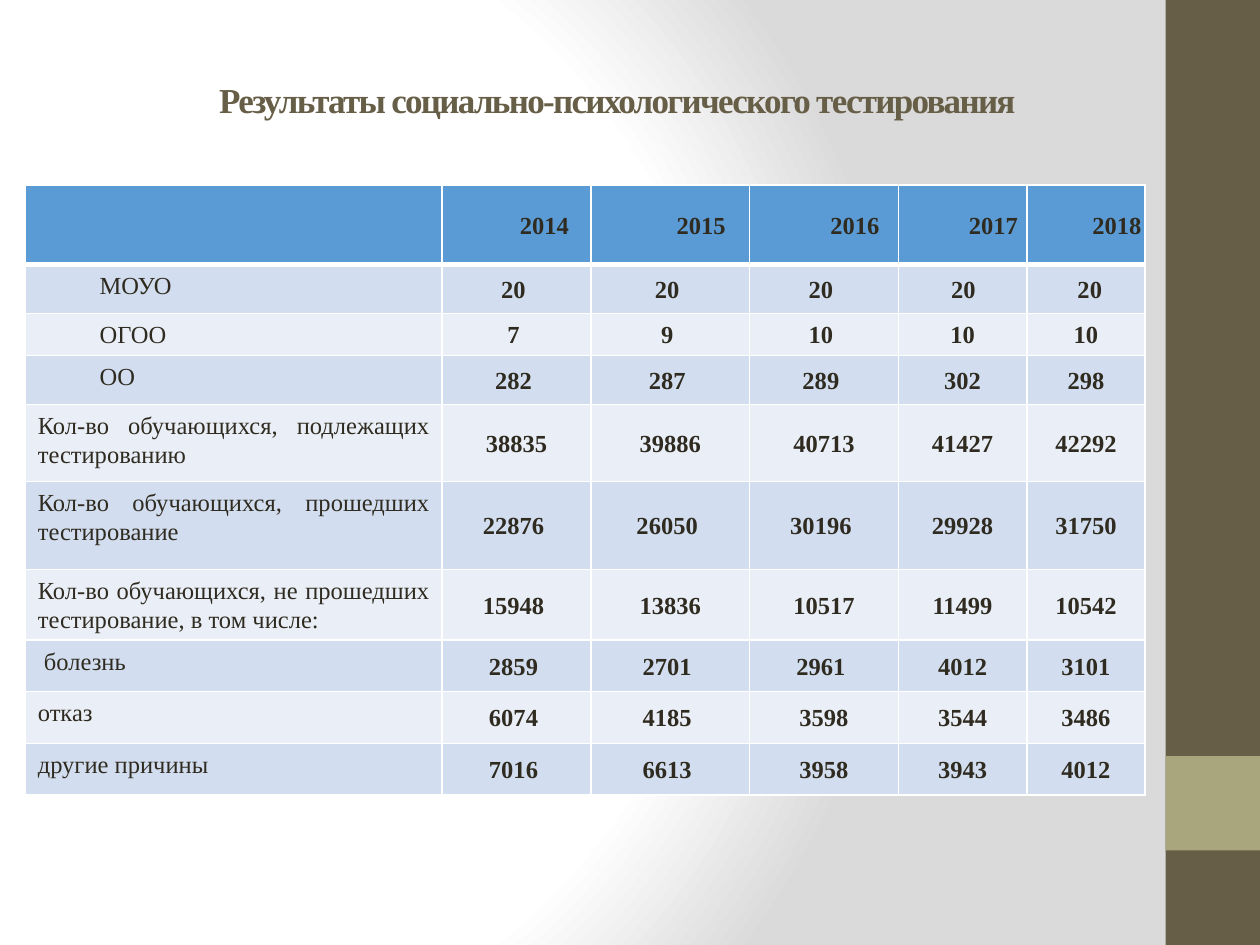
from dataclasses import dataclass

from pptx import Presentation
from pptx.dml.color import RGBColor
from pptx.enum.shapes import MSO_SHAPE as Shape
from pptx.enum.text import MSO_ANCHOR as Anchor, PP_ALIGN as Align
from pptx.oxml import parse_xml
from pptx.oxml.ns import nsdecls, qn
from pptx.slide import Slide
from pptx.util import Inches, Pt

COLORS = {
    "white": "FFFFFF", "shade": "DADADA", "brown": "675E47", "olive": "A9A57C",
    "header": "5B9BD5", "odd": "D2DEEF", "even": "EAEFF7", "ink": "2F2B20",
}
GRID_COLUMNS, GRID_ROWS = 100, 75
TITLE = " Результаты социально-психологического тестирования"
COLUMN_SPANS = [33.1, 11.8, 12.6, 11.8, 10.2, 9.4]
ROW_SPANS = [6.3, 3.9, 3.1, 3.9, 6.1, 7, 4.6, 4.1, 4.1, 4.1]
# Some figures end in a space, which shifts them off the centre of the cell.
RESULTS = [
    ["", "2014 ", "2015", "2016", "2017", "2018"],
    ["МОУО", "20 ", "20 ", "20 ", "20 ", "20"],
    ["ОГОО", "7 ", "9 ", "10 ", "10", "10"],
    ["ОО", "282 ", "287 ", "289 ", "302", "298"],
    ["Кол-во обучающихся, подлежащих тестированию",
     "38835", "39886", "40713", "41427", "42292"],
    ["Кол-во обучающихся, прошедших тестирование",
     "22876 ", "26050 ", "30196 ", "29928", "31750"],
    ["Кол-во обучающихся, не прошедших тестирование, в том числе:",
     "15948 ", "13836", "10517", "11499", "10542"],
    [" болезнь", "2859 ", "2701 ", "2961 ", "4012", "3101"],
    ["отказ", "6074 ", "4185 ", "3598", "3544", "3486"],
    ["другие причины", "7016 ", "6613 ", "3958", "3943", "4012"],
]
INSTITUTION_ROWS = range(1, 4)
NARROW_COLUMNS = (4, 5)


@dataclass
class Deck:
    slide: Slide
    width: int
    height: int
    font: str = "Times New Roman"

    def across(self, columns):
        return round(self.width * columns / GRID_COLUMNS)

    def down(self, rows):
        return round(self.height * rows / GRID_ROWS)

    def box(self, left, top, width, height):
        return self.across(left), self.down(top), self.across(width), self.down(height)

    def background(self, stops):
        """Radial gradient centred left of the middle; stops are (percent, colour)."""
        self.slide.background.fill.gradient()
        plain = self.slide.element.find(".//" + qn("a:gradFill"))
        stop_list = "".join(
            f'<a:gs pos="{percent * 1000}"><a:srgbClr val="{COLORS[color]}"/></a:gs>'
            for percent, color in stops)
        radial = parse_xml(
            f'<a:gradFill {nsdecls("a")} rotWithShape="1"><a:gsLst>{stop_list}</a:gsLst>'
            '<a:path path="circle"><a:fillToRect l="20000" t="50000" r="100000" b="50000"/>'
            '</a:path></a:gradFill>')
        plain.getparent().replace(plain, radial)

    def band(self, color, *area):
        band = self.slide.shapes.add_shape(Shape.RECTANGLE, *self.box(*area))
        band.shadow.inherit = False
        band.fill.solid()
        band.fill.fore_color.rgb = RGBColor.from_string(COLORS[color])
        band.line.fill.background()

    def text(self, paragraph, words, size, color, bold):
        run = paragraph.add_run()
        run.text = words
        run.font.name = self.font
        run.font.size = Pt(size)
        run.font.bold = bold
        run.font.color.rgb = RGBColor.from_string(COLORS[color])
        return run

    def title(self, words, *area):
        title = self.slide.shapes.title
        title.left, title.top, title.width, title.height = self.box(*area)
        frame = title.text_frame
        frame.word_wrap = True
        frame.vertical_anchor = Anchor.MIDDLE
        heading = frame.paragraphs[0]
        heading.alignment = Align.CENTER
        run = self.text(heading, words, 20, "brown", True)
        run._r.get_or_add_rPr().set("spc", "-100")

    def table(self, rows, left, top):
        area = self.box(left, top, sum(COLUMN_SPANS), sum(ROW_SPANS))
        table = self.slide.shapes.add_table(len(rows), len(rows[0]), *area).table
        table.horz_banding = False
        for column, span in zip(table.columns, COLUMN_SPANS):
            column.width = self.across(span)
        for row, span in zip(table.rows, ROW_SPANS):
            row.height = self.down(span)
        for r, entries in enumerate(rows):
            for c, entry in enumerate(entries):
                self.cell(table.cell(r, c), r, c, entry)

    def cell(self, cell, row, column, entry):
        color = "header" if row == 0 else "odd" if row % 2 else "even"
        cell.fill.solid()
        cell.fill.fore_color.rgb = RGBColor.from_string(COLORS[color])
        self.borders(cell, top=3 if row == 1 else 1, bottom=3 if row == 0 else 1)

        narrow, label = column in NARROW_COLUMNS, column == 0
        cell.margin_left = cell.margin_right = Inches(0 if narrow else 0.1)
        cell.margin_top = cell.margin_bottom = Inches(0 if narrow else 0.05)
        cell.vertical_anchor = Anchor.TOP if label else Anchor.MIDDLE

        paragraph = cell.text_frame.paragraphs[0]
        paragraph.alignment = Align.JUSTIFY if label else Align.CENTER
        paragraph.line_spacing = 1.07
        indented = row == 0 or (label and row in INSTITUTION_ROWS)
        margin = 0.06 if narrow and row == 1 else 0
        properties = paragraph._p.get_or_add_pPr()
        properties.set("marL", str(Inches(margin)))
        properties.set("indent", str(Inches(0.49 if indented else 0)))
        if entry:
            self.text(paragraph, entry, 14, "ink", not label)

    def borders(self, cell, top, bottom):
        """White cell borders; the lines have to precede the fill."""
        sides = [("L", 1), ("R", 1), ("T", top), ("B", bottom)]
        for position, (side, weight) in enumerate(sides):
            cell._tc.get_or_add_tcPr().insert(position, parse_xml(
                f'<a:ln{side} {nsdecls("a")} w="{Pt(weight)}"><a:solidFill>'
                f'<a:srgbClr val="{COLORS["white"]}"/></a:solidFill></a:ln{side}>'))


def main():
    prs = Presentation()
    prs.slide_width, prs.slide_height = Inches(10), Inches(7.5)
    title_only = prs.slide_layouts[5]
    deck = Deck(prs.slides.add_slide(title_only), prs.slide_width, prs.slide_height)

    deck.background([(0, "white"), (75, "white"), (100, "shade")])
    deck.band("brown", 92.5, 0, 7.5, GRID_ROWS)
    deck.band("olive", 92.5, 60, 7.5, 7.5)
    deck.table(RESULTS, 2, 14.7)
    deck.title(TITLE, 4.6, 3.2, 88.2, 9.4)
    prs.save("out.pptx")


if __name__ == "__main__":
    main()
